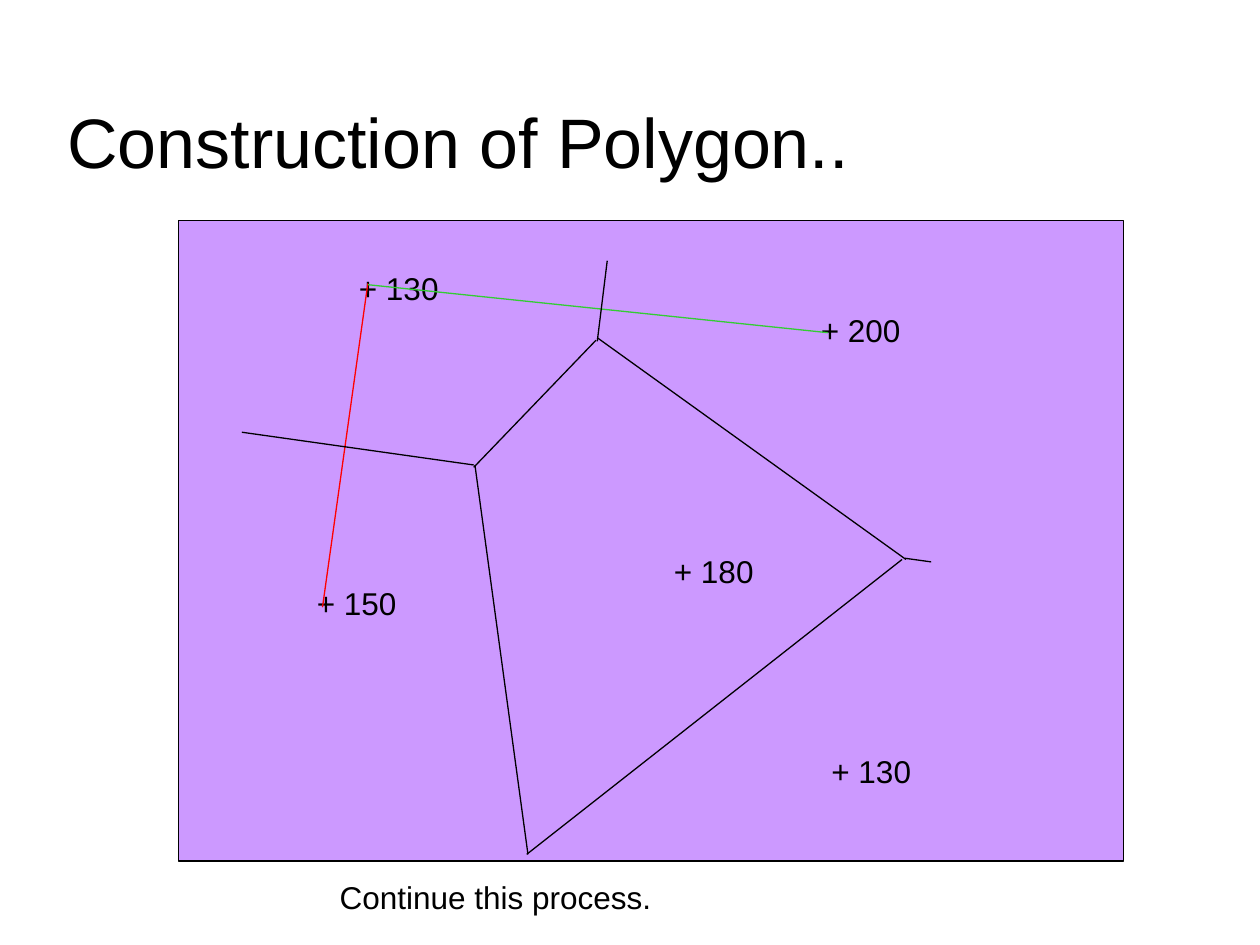
from typing import NamedTuple

from lxml import etree
from pptx import Presentation
from pptx.dml.color import RGBColor
from pptx.enum.shapes import MSO_CONNECTOR as Connector, MSO_SHAPE as Shape
from pptx.enum.text import MSO_ANCHOR as Anchor, MSO_AUTO_SIZE as AutoSize
from pptx.oxml.ns import qn
from pptx.util import Pt

BLACK = RGBColor(0x00, 0x00, 0x00)
LILAC = RGBColor(0xCC, 0x99, 0xFF)
RED = RGBColor(0xFF, 0x00, 0x00)
GREEN = RGBColor(0x33, 0xCC, 0x33)
FONT = "Arial"
LINE_WIDTH = 0.75
LABEL_WIDTH, LABEL_HEIGHT = 66, 29


class Label(NamedTuple):
    text: str
    left: float
    top: float
    width: float = LABEL_WIDTH
    height: float = LABEL_HEIGHT
    size: float = 18
    anchor: Anchor = Anchor.TOP


class Edge(NamedTuple):
    x1: float
    y1: float
    x2: float
    y2: float
    color: RGBColor = BLACK


TITLE = Label("Construction of Polygon..", 31.5, 18, 612, 90, 40, Anchor.BOTTOM)

LABELS = [
    Label("+ 130", 198, 150),
    Label("+ 150", 174, 330),
    Label("+ 200", 462, 174),
    Label("+ 180", 378, 312),
    Label("+ 130", 468, 426),
    Label("Continue this process.", 187, 498, width=396),
]

EDGES = [
    # Lines between neighbouring points
    Edge(184.3, 347, 210.2, 162, RED),
    Edge(473, 190.1, 210.2, 162.7, GREEN),
    # Sides of the polygon
    Edge(270.7, 267.1, 340.6, 194.4),
    Edge(341.3, 193, 517.7, 319.7),
    Edge(301.7, 488.2, 271.4, 265.7),
    Edge(301, 488.2, 515.5, 319.7),
    # Bisectors running outwards from its corners
    Edge(270.7, 265.7, 138.2, 247),
    Edge(341.3, 195.1, 347, 149),
    Edge(517, 319, 532.1, 321.1),
]


def add_label(slide, label: Label) -> None:
    box = slide.shapes.add_textbox(
        Pt(label.left), Pt(label.top), Pt(label.width), Pt(label.height))
    frame = box.text_frame
    frame.word_wrap = True
    frame.auto_size = AutoSize.NONE
    frame.vertical_anchor = label.anchor
    run = frame.paragraphs[0].add_run()
    run.text = label.text
    run.font.name = FONT
    run.font.size = Pt(label.size)
    run.font.color.rgb = BLACK


def add_study_area(slide) -> None:
    area = slide.shapes.add_shape(
        Shape.RECTANGLE, Pt(102), Pt(126), Pt(540), Pt(366))
    area.shadow.inherit = False
    area.fill.solid()
    area.fill.fore_color.rgb = LILAC
    area.line.color.rgb = BLACK
    area.line.width = Pt(LINE_WIDTH)


def add_edge(slide, edge: Edge) -> None:
    line = slide.shapes.add_connector(
        Connector.STRAIGHT, Pt(edge.x1), Pt(edge.y1), Pt(edge.x2), Pt(edge.y2))
    line.line.color.rgb = edge.color
    line.line.width = Pt(LINE_WIDTH)
    etree.SubElement(line._element.spPr, qn("a:effectLst"))


def main() -> None:
    deck = Presentation()
    deck.slide_width, deck.slide_height = Pt(720), Pt(540)
    slide = deck.slides.add_slide(deck.slide_layouts[6])
    add_label(slide, TITLE)
    add_study_area(slide)
    for label in LABELS:
        add_label(slide, label)
    for edge in EDGES:
        add_edge(slide, edge)
    deck.save("out.pptx")


if __name__ == "__main__":
    main()
